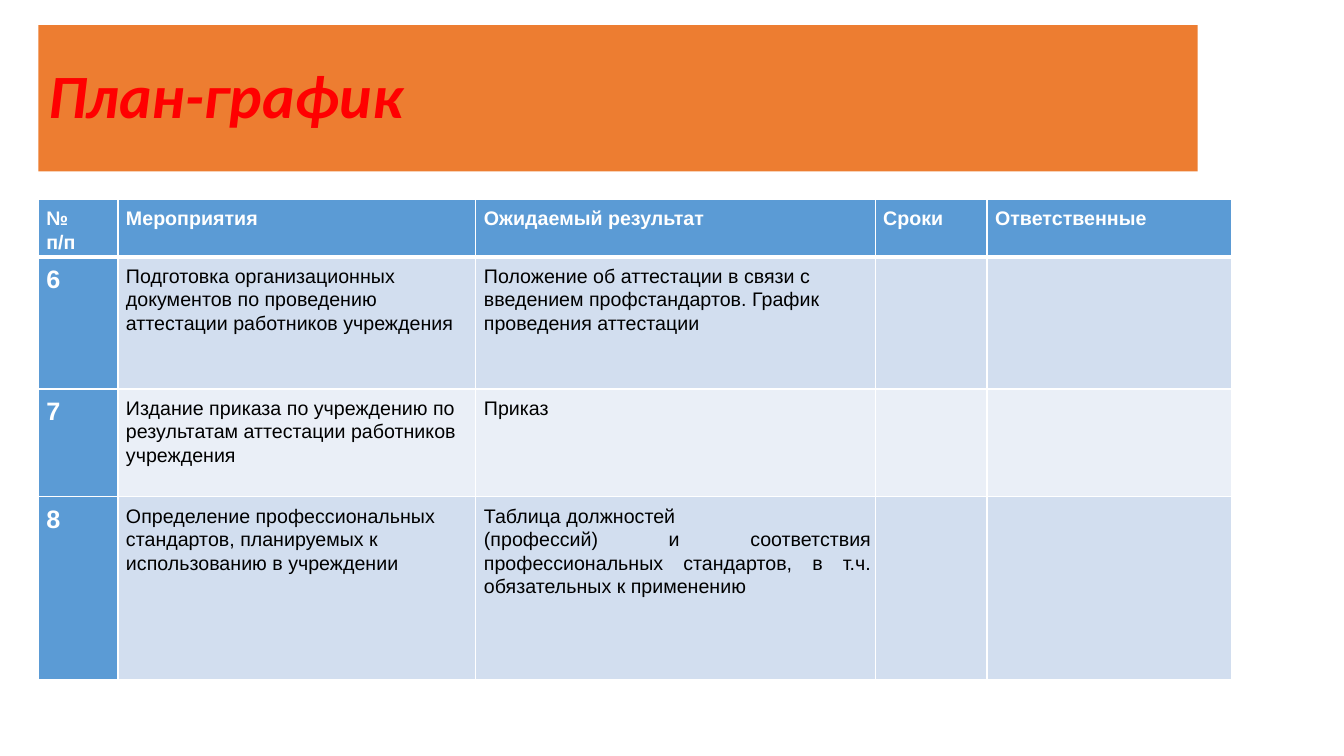
from lxml.etree import SubElement
from pptx import Presentation
from pptx.dml.color import RGBColor
from pptx.enum.shapes import MSO_SHAPE
from pptx.enum.text import MSO_ANCHOR, PP_ALIGN
from pptx.oxml.ns import qn
from pptx.util import Inches, Pt

BLUE, WHITE, BLACK = "5B9BD5", "FFFFFF", "000000"
BANDS = ["D2DEEF", "EAEFF7"]
COLS = [0.79, 3.55, 3.96, 1.11, 2.43]
ROWS = [0.57, 1.31, 1.07, 1.81]
HEADER = ["№\nп/п", "Мероприятия", "Ожидаемый результат", "Сроки", "Ответственные"]
PLAN = [
    ["6", "Подготовка организационных документов по проведению аттестации работников учреждения",
     "Положение об аттестации в связи с введением профстандартов. График проведения аттестации", "", ""],
    ["7", "Издание приказа по учреждению по результатам аттестации работников учреждения",
     "Приказ", "", ""],
    ["8", "Определение профессиональных стандартов, планируемых к использованию в учреждении",
     "Таблица должностей\n(профессий) и соответствия профессиональных стандартов, в т.ч. "
     "обязательных к применению ", "", ""],
]
JUSTIFIED = ("Сроки", "(профессий)")


def rgb(value):
    return RGBColor.from_string(value)


def write(tf, text, size=14, color=BLACK, bold=False, italic=False, font="Arial", spacing=1.07):
    """Fill a text frame, one paragraph per line of text."""
    for i, line in enumerate(text.split("\n")):
        p = tf.add_paragraph() if i else tf.paragraphs[0]
        p.alignment = PP_ALIGN.JUSTIFY if line.startswith(JUSTIFIED) else PP_ALIGN.LEFT
        p.line_spacing = spacing
        r = p.add_run()
        r.text = line
        r.font.name, r.font.size = font, Pt(size)
        r.font.bold, r.font.italic = bold, italic
        r.font.color.rgb = rgb(color)


def set_borders(cell, **widths):
    """Draw white cell borders; widths in points by side (L, R, T, B), 1 by default."""
    for side in "LRTB":
        ln = SubElement(cell._tc.get_or_add_tcPr(), qn(f"a:ln{side}"), w=str(Pt(widths.get(side, 1))))
        SubElement(SubElement(ln, qn("a:solidFill")), qn("a:srgbClr"), val=WHITE)


class PlanSlide:
    def __init__(self, prs):
        self.left = Inches(0.38)
        self.s = prs.slides.add_slide(prs.slide_layouts[6])

    def title(self, text):
        sp = self.s.shapes.add_shape(MSO_SHAPE.RECTANGLE, self.left, Inches(0.25),
                                     Inches(11.5), Inches(1.45))
        sp.shadow.inherit = False
        sp.fill.solid()
        sp.fill.fore_color.rgb = rgb("ED7D31")
        sp.line.fill.background()
        tf = sp.text_frame
        tf.word_wrap = True
        tf.vertical_anchor = MSO_ANCHOR.MIDDLE
        write(tf, text, size=44, color="FF0000", bold=True, italic=True, font="Calibri", spacing=0.9)

    def table(self, rows):
        table = self.s.shapes.add_table(len(ROWS), len(COLS), self.left, Inches(1.98),
                                        Inches(sum(COLS)), Inches(sum(ROWS))).table
        for column, width in zip(table.columns, COLS):
            column.width = Inches(width)
        for i, (row, height) in enumerate(zip(table.rows, ROWS)):
            row.height = Inches(height)
            for j, text in enumerate(rows[i]):
                self.cell(table.cell(i, j), text, i, j)

    def cell(self, cell, text, i, j):
        heading = i == 0 or j == 0
        set_borders(cell, T=3 if i == 1 else 1, B=3 if i == 0 else 1)
        cell.fill.solid()
        cell.fill.fore_color.rgb = rgb(BLUE if heading else BANDS[(i - 1) % 2])
        if text:
            cell.margin_left, cell.margin_top = Inches(0.08), Inches(0.07)
            cell.margin_right, cell.margin_bottom = Inches(0.04), 0
            write(cell.text_frame, text, size=18 if i and not j else 14,
                  color=WHITE if heading else BLACK, bold=heading)


def main():
    prs = Presentation()
    prs.slide_width, prs.slide_height = Inches(13.33), Inches(7.5)
    slide = PlanSlide(prs)
    slide.title("План-график")
    slide.table([HEADER] + PLAN)
    prs.save("out.pptx")


if __name__ == "__main__":
    main()
